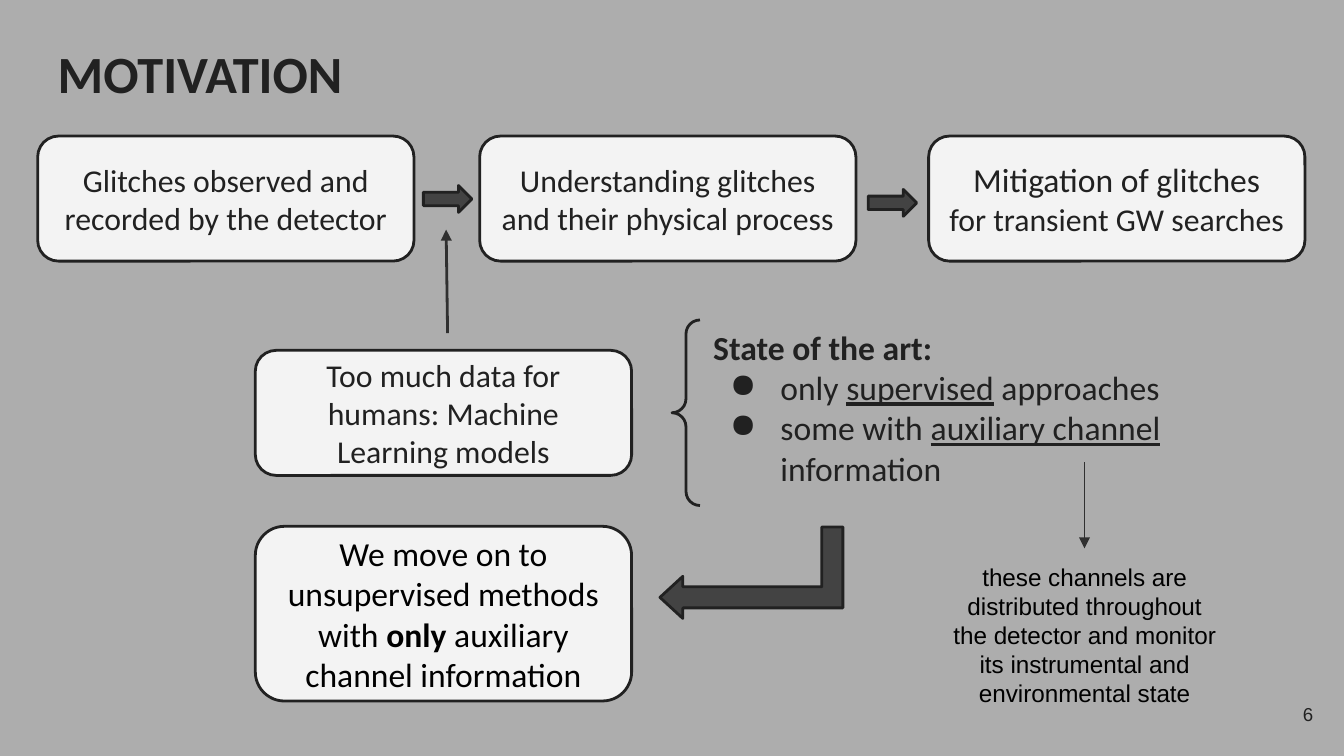
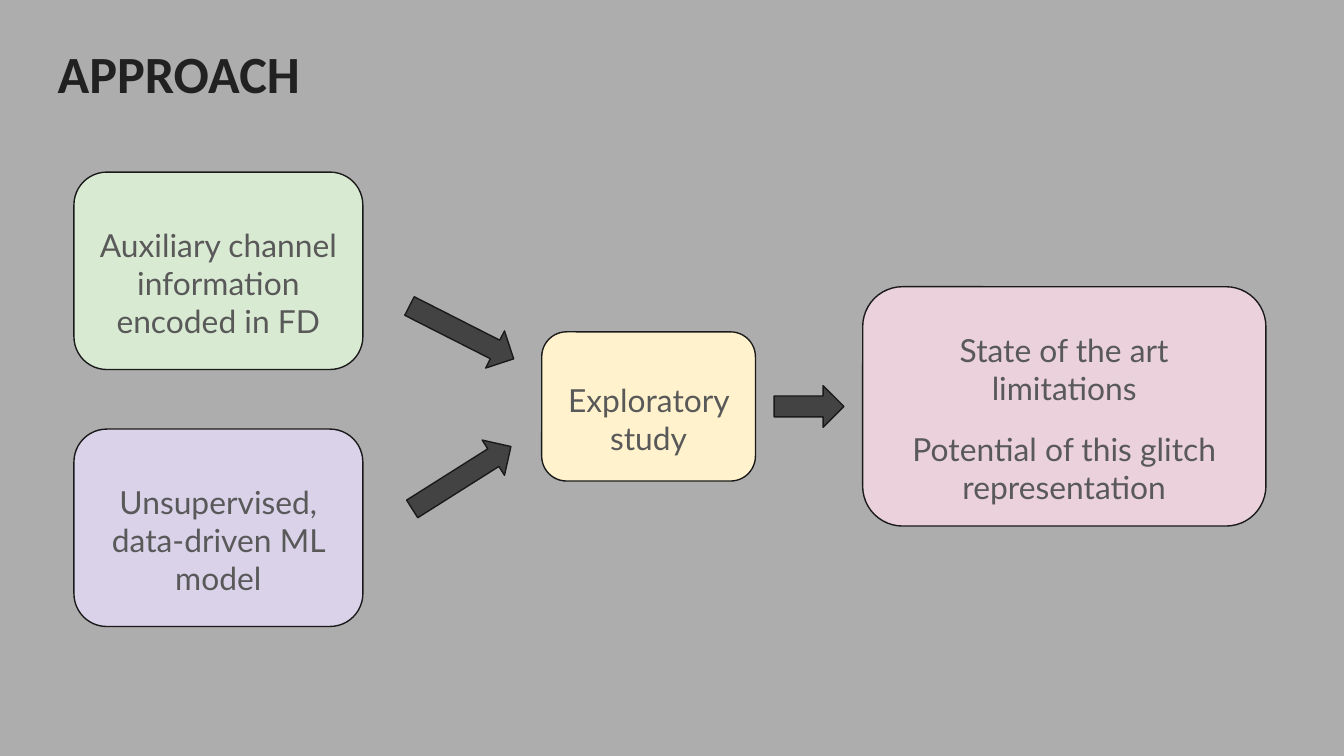
from lxml import etree
from pptx import Presentation
from pptx.dml import color as dml
from pptx.enum import shapes, text
from pptx.oxml import ns
from pptx.util import Pt

PRESET = shapes.MSO_SHAPE
ALIGN = text.PP_ALIGN
ANCHOR = text.MSO_ANCHOR

GREY, INK, DARK = "ADADAD", "212121", "434343"
PALE, CONNECTOR, BLACK = "F3F3F3", "303030", "000000"
OUTLINE, SOFT_TEXT = "1A1A1A", "595959"


def rgb(value):
    return dml.RGBColor.from_string(value)


def add_element(parent, tag, **attributes):
    return etree.SubElement(parent, ns.qn(tag), **attributes)


class Deck:
    inset = 7.2

    def __init__(self):
        self.presentation = Presentation()
        self.presentation.slide_width = Pt(720)
        self.presentation.slide_height = Pt(405)
        self.slide = None
        self.line_color, self.line_width = INK, 1.5

    def start_slide(self, title, line_color, line_width):
        self.slide = self.presentation.slides.add_slide(self.presentation.slide_layouts[6])
        self.slide.background.fill.solid()
        self.slide.background.fill.fore_color.rgb = rgb(GREY)
        self.line_color, self.line_width = line_color, line_width
        self.label((23.8, 15.1, 671, 45.4), [[(title, "b")]], 28)

    def fill_text(self, shape, paragraphs, size, font="Calibri", color=INK, align=ALIGN.CENTER,
                  anchor=ANCHOR.MIDDLE, top=inset, gap=0, bullets=False):
        frame = shape.text_frame
        frame.word_wrap = True
        frame.vertical_anchor = anchor
        frame.margin_left = frame.margin_right = frame.margin_bottom = Pt(self.inset)
        frame.margin_top = Pt(top)
        for index, parts in enumerate(paragraphs):
            paragraph = frame.add_paragraph() if index else frame.paragraphs[0]
            paragraph.alignment = align
            if index:
                paragraph.space_before = Pt(gap)
                if bullets:
                    self.bullet(paragraph, color)
            for content, style in [(parts, "")] if isinstance(parts, str) else parts:
                run = paragraph.add_run()
                run.text = content
                run.font.name = font
                run.font.size = Pt(size)
                run.font.color.rgb = rgb(color)
                run.font.bold = "b" in style
                run.font.underline = "u" in style

    def bullet(self, paragraph, color):
        properties = paragraph._p.get_or_add_pPr()
        properties.set("marL", str(Pt(36)))
        properties.set("indent", str(-Pt(27)))
        add_element(add_element(properties, "a:buClr"), "a:srgbClr", val=color)
        add_element(properties, "a:buChar", char="●")

    def label(self, place, paragraphs, size, align=ALIGN.LEFT, anchor=ANCHOR.TOP, **style):
        shape = self.slide.shapes.add_textbox(*map(Pt, place))
        self.fill_text(shape, paragraphs, size, align=align, anchor=anchor, **style)
        return shape

    def shape(self, preset, place, fill=None, rotation=0, adjustments=()):
        shape = self.slide.shapes.add_shape(preset, *map(Pt, place))
        shape.shadow.inherit = False
        if fill:
            shape.fill.solid()
            shape.fill.fore_color.rgb = rgb(fill)
        else:
            shape.fill.background()
        shape.line.color.rgb = rgb(self.line_color)
        shape.line.width = Pt(self.line_width)
        shape.rotation = rotation
        for index, value in enumerate(adjustments):
            shape.adjustments[index] = value
        return shape

    def card(self, place, paragraphs, size=17, fill=PALE, **style):
        shape = self.shape(PRESET.ROUNDED_RECTANGLE, place, fill)
        self.fill_text(shape, paragraphs, size, **style)
        return shape

    def block_arrow(self, place, rotation=0):
        return self.shape(PRESET.RIGHT_ARROW, place, DARK, rotation)

    def arrow(self, start, end, width, target=None):
        connector = self.slide.shapes.add_connector(
            shapes.MSO_CONNECTOR.STRAIGHT, *map(Pt, (*start, *end)))
        connector.line.color.rgb = rgb(CONNECTOR)
        connector.line.width = Pt(width)
        add_element(connector.line._get_or_add_ln(), "a:tailEnd", type="triangle")
        add_element(connector._element.spPr, "a:effectLst")
        if target is not None:
            connector.end_connect(target, 0)


def build_motivation(deck):
    deck.start_slide("MOTIVATION", INK, 1.5)
    card_width, card_height = 201.6, 67

    for left, top in ((226.8, 99.4), (465.1, 101.5)):
        deck.block_arrow((left, top, 26, 14.4))
    deck.arrow((239.8, 178.5), (239, 123), 1.5)

    deck.shape(PRESET.LEFT_BRACE, (360, 171.4, 15, 99.4), adjustments=(0.5, 0.5))
    deck.label((375, 167.8, 275, 106.6), [
        [("State of the art:", "b")],
        [("only ", ""), ("supervised", "u"), (" approaches", "")],
        [("some with ", ""), ("auxiliary channel ", "u"), ("information", "")],
    ], 18, bullets=True)

    steps = (
        (20.2, ["Glitches observed and recorded by the detector"]),
        (257, ["Understanding glitches and their physical process"]),
        (497.5, ["Mitigation of glitches", "for transient GW searches"]),
    )
    for left, paragraphs in steps:
        card = deck.card((left, 72.9, card_width, card_height), paragraphs)
    card.text_frame.paragraphs[0].runs[0].font.size = Pt(18)

    deck.card((136.8, 187.7, card_width, card_height),
              ["Too much data for humans: Machine Learning models"])
    bent_arrow = deck.shape(PRESET.BENT_UP_ARROW, (378, 257.8, 49, 98), DARK, 270,
                            (0.23, 0.23, 0.25))
    bent_arrow._element.spPr.xfrm.set("flipH", "1")
    deck.card((136.8, 282, card_width, 93.6), [[
        ("We move on to unsupervised methods with ", ""),
        ("only", "b"),
        (" auxiliary channel information", ""),
    ]], 18, color=BLACK)

    deck.label((667.4, 367.2, 43.2, 31), ["6"], 10, ALIGN.RIGHT, ANCHOR.MIDDLE, font="Arial")
    channel_note = deck.label((501.8, 293.8, 158.4, 67), [
        "these channels are distributed throughout the detector and monitor "
        "its instrumental and environmental state",
    ], 13, ALIGN.CENTER, font="Arial", color=BLACK)
    deck.arrow((581, 247.7), (581, 293.8), 0.75, channel_note)


def build_approach(deck):
    deck.start_slide("APPROACH", OUTLINE, 0.75)
    stages = (
        ((39.6, 92.2, 154.8, 105.8), "D9EAD3", ["Auxiliary channel information encoded in FD"]),
        ((39.6, 229.9, 154.8, 105.8), "D9D2E9", ["Unsupervised, data-driven ML model"]),
        ((290.2, 177.8, 114.5, 79.9), "FFF2CC", ["Exploratory study"]),
        ((462.2, 153.6, 216, 128.2), "EAD1DC",
         ["State of the art limitations", "Potential of this glitch representation"]),
    )
    for place, fill, paragraphs in stages:
        deck.card(place, paragraphs, fill=fill, font="Lato", color=SOFT_TEXT, top=20, gap=12)

    for left, top, width, rotation in (
        (216, 167, 62.6, 26.9), (216, 244.8, 62.6, 327.7), (414.7, 206.6, 37.4, 0),
    ):
        deck.block_arrow((left, top, width, 22.3), rotation)


def main():
    deck = Deck()
    build_motivation(deck)
    build_approach(deck)
    deck.presentation.save("out.pptx")


if __name__ == "__main__":
    main()
